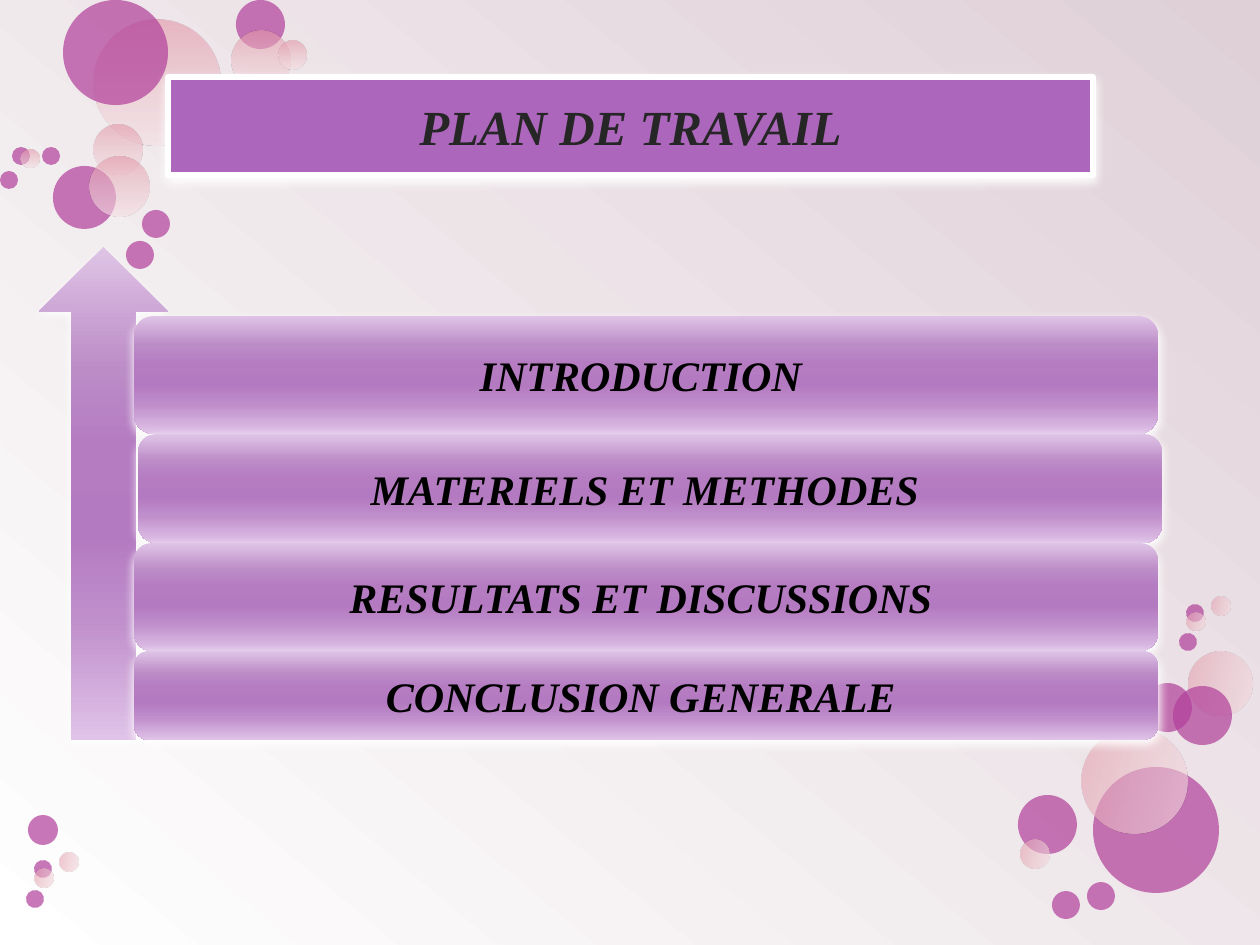
from dataclasses import dataclass
from itertools import accumulate
from typing import NamedTuple

import pptx
import pptx.dml.color
import pptx.enum.shapes
import pptx.enum.text
import pptx.oxml
import pptx.oxml.ns
import pptx.util

EMU_PER_PX = 914400 / 126
NS = pptx.oxml.ns.nsdecls("a")
qn = pptx.oxml.ns.qn
MSO = pptx.enum.shapes.MSO_SHAPE


class Stop(NamedTuple):
    percent: int
    color: str
    alpha: int = 100


class Bubble(NamedTuple):
    x: int
    y: int
    size: int
    pink: bool = False


class Bar(NamedTuple):
    text: str
    x: int
    height: int


@dataclass(frozen=True)
class Theme:
    font: str = "Times New Roman"
    title_size: int = 28
    bar_size: int = 24
    title_text: str = "262626"
    bar_text: str = "000000"
    title_fill: str = "AC66BB"
    white: str = "FFFFFF"
    bubble: str = "B13F9A"
    bubble_alpha: int = 70
    background: tuple = (Stop(0, "DFD0D7"), Stop(100, "FFFFFF"))
    pink: tuple = (Stop(0, "E296A8", 60), Stop(50, "EBC0C9", 60), Stop(100, "F5E0E5", 60))
    sheen: tuple = (Stop(0, "DFC4E6"), Stop(25, "BC8CC7"), Stop(40, "B57CC2"),
                    Stop(50, "B47AC1"), Stop(60, "B57CC2"), Stop(75, "BF8ECB"),
                    Stop(100, "E0C3E8"))


THEME = Theme()

TOP_BUBBLES = [
    Bubble(94, 20, 126, True), Bubble(53, 166, 63), Bubble(94, 125, 49, True),
    Bubble(90, 157, 59, True), Bubble(63, 0, 105), Bubble(236, 0, 49),
    Bubble(231, 31, 59, True), Bubble(279, 41, 28, True), Bubble(142, 210, 28),
    Bubble(12, 147, 18), Bubble(126, 241, 28), Bubble(0, 171, 18),
    Bubble(21, 150, 18, True), Bubble(42, 147, 18),
]
BOTTOM_BUBBLES = [
    Bubble(1093, 767, 126), Bubble(1189, 652, 63, True), Bubble(1143, 683, 49),
    Bubble(1173, 686, 59), Bubble(1082, 729, 105, True), Bubble(28, 815, 30),
    Bubble(1018, 795, 59), Bubble(1021, 840, 28, True), Bubble(1052, 891, 28),
    Bubble(1186, 604, 18), Bubble(1087, 882, 28), Bubble(1212, 597, 18, True),
    Bubble(1187, 613, 18, True), Bubble(1179, 633, 18), Bubble(34, 860, 18),
    Bubble(60, 853, 18, True), Bubble(35, 869, 18, True), Bubble(26, 890, 18),
]
BARS = [
    Bar("INTRODUCTION ", 134, 118),
    Bar("MATERIELS ET METHODES ", 138, 109),
    Bar("RESULTATS ET DISCUSSIONS ", 134, 108),
    Bar("CONCLUSION GENERALE ", 134, 89),
]
BARS_TOP, BAR_WIDTH = 316, 1024


def px(n: int) -> pptx.util.Emu:
    return pptx.util.Emu(round(n * EMU_PER_PX))


def rgb(color: str) -> pptx.dml.color.RGBColor:
    return pptx.dml.color.RGBColor.from_string(color)


def set_gradient(fill, owner, stops: tuple, angle: int) -> None:
    """Fill with any number of stops; angle is clockwise, owner holds the fill's XML."""
    fill.gradient()
    fill.gradient_angle = 360 - angle
    gs_lst = owner.find(".//" + qn("a:gsLst"))
    for gs in list(gs_lst):
        gs_lst.remove(gs)
    for stop in stops:
        gs_lst.append(pptx.oxml.parse_xml(
            f'<a:gs {NS} pos="{stop.percent * 1000}"><a:srgbClr val="{stop.color}">'
            f'<a:alpha val="{stop.alpha * 1000}"/></a:srgbClr></a:gs>'))


def add_shape(s, kind, x: int, y: int, w: int, h: int):
    sp = s.shapes.add_shape(kind, px(x), px(y), px(w), px(h))
    sp.shadow.inherit = False
    sp.line.fill.background()
    return sp


def add_halo(sp) -> None:
    """Add a soft white shadow around the shape."""
    sp.shadow.inherit = False
    sp.element.spPr.find(qn("a:effectLst")).append(pptx.oxml.parse_xml(
        f'<a:outerShdw {NS} blurRad="{px(10)}" dist="{px(4)}" dir="5400000" '
        f'rotWithShape="0"><a:srgbClr val="{THEME.white}"/></a:outerShdw>'))


def set_text(sp, text: str, size: int, color: str, wrap: bool) -> None:
    tf = sp.text_frame
    tf.text = text
    tf.word_wrap = wrap
    tf.auto_size = pptx.enum.text.MSO_AUTO_SIZE.NONE
    tf.vertical_anchor = pptx.enum.text.MSO_ANCHOR.MIDDLE
    p = tf.paragraphs[0]
    p.alignment = pptx.enum.text.PP_ALIGN.CENTER
    font = p.runs[0].font
    font.name, font.size = THEME.font, pptx.util.Pt(size)
    font.bold = font.italic = True
    font.color.rgb = rgb(color)


def add_bubble(s, bubble: Bubble, turned: bool) -> None:
    sp = add_shape(s, MSO.OVAL, bubble.x, bubble.y, bubble.size, bubble.size)
    if bubble.pink:
        set_gradient(sp.fill, sp.element, THEME.pink, 90)
    else:
        sp.fill.solid()
        sp.fill.fore_color.rgb = rgb(THEME.bubble)
        sp.element.spPr.find(".//" + qn("a:srgbClr")).append(pptx.oxml.parse_xml(
            f'<a:alpha {NS} val="{THEME.bubble_alpha * 1000}"/>'))
    if turned:
        sp.rotation = 103.3
        sp.element.spPr.find(qn("a:xfrm")).set("flipV", "1")


def add_sheen_shape(s, kind, x: int, y: int, w: int, h: int):
    sp = add_shape(s, kind, x, y, w, h)
    set_gradient(sp.fill, sp.element, THEME.sheen, 90)
    add_halo(sp)
    return sp


def place_title(s) -> None:
    """Turn the title placeholder into an outlined ellipse in front of the rest."""
    sp = s.shapes.title
    sp.left, sp.top, sp.width, sp.height = px(168), px(77), px(925), px(98)
    sp.element.spPr.find(qn("a:xfrm")).addnext(pptx.oxml.parse_xml(
        f'<a:prstGeom {NS} prst="ellipse"><a:avLst/></a:prstGeom>'))
    sp.fill.solid()
    sp.fill.fore_color.rgb = rgb(THEME.title_fill)
    sp.line.color.rgb = rgb(THEME.white)
    sp.line.width = pptx.util.Pt(3)
    add_halo(sp)
    set_text(sp, "PLAN DE TRAVAIL", THEME.title_size, THEME.title_text, True)
    sp.element.getparent().append(sp.element)


def main() -> None:
    prs = pptx.Presentation()
    prs.slide_width, prs.slide_height = px(1260), px(945)
    s = prs.slides.add_slide(prs.slide_layouts.get_by_name("Title Only"))
    set_gradient(s.background.fill, s.element, THEME.background, 130)

    for bubbles, turned in ((TOP_BUBBLES, False), (BOTTOM_BUBBLES, True)):
        for bubble in bubbles:
            add_bubble(s, bubble, turned)

    add_sheen_shape(s, MSO.UP_ARROW, 39, 247, 129, 493)
    tops = accumulate((bar.height for bar in BARS), initial=BARS_TOP)
    for bar, top in zip(BARS, tops):
        sp = add_sheen_shape(s, MSO.ROUNDED_RECTANGLE, bar.x, top, BAR_WIDTH, bar.height)
        set_text(sp, bar.text, THEME.bar_size, THEME.bar_text, False)

    place_title(s)
    prs.save("out.pptx")


if __name__ == "__main__":
    main()
